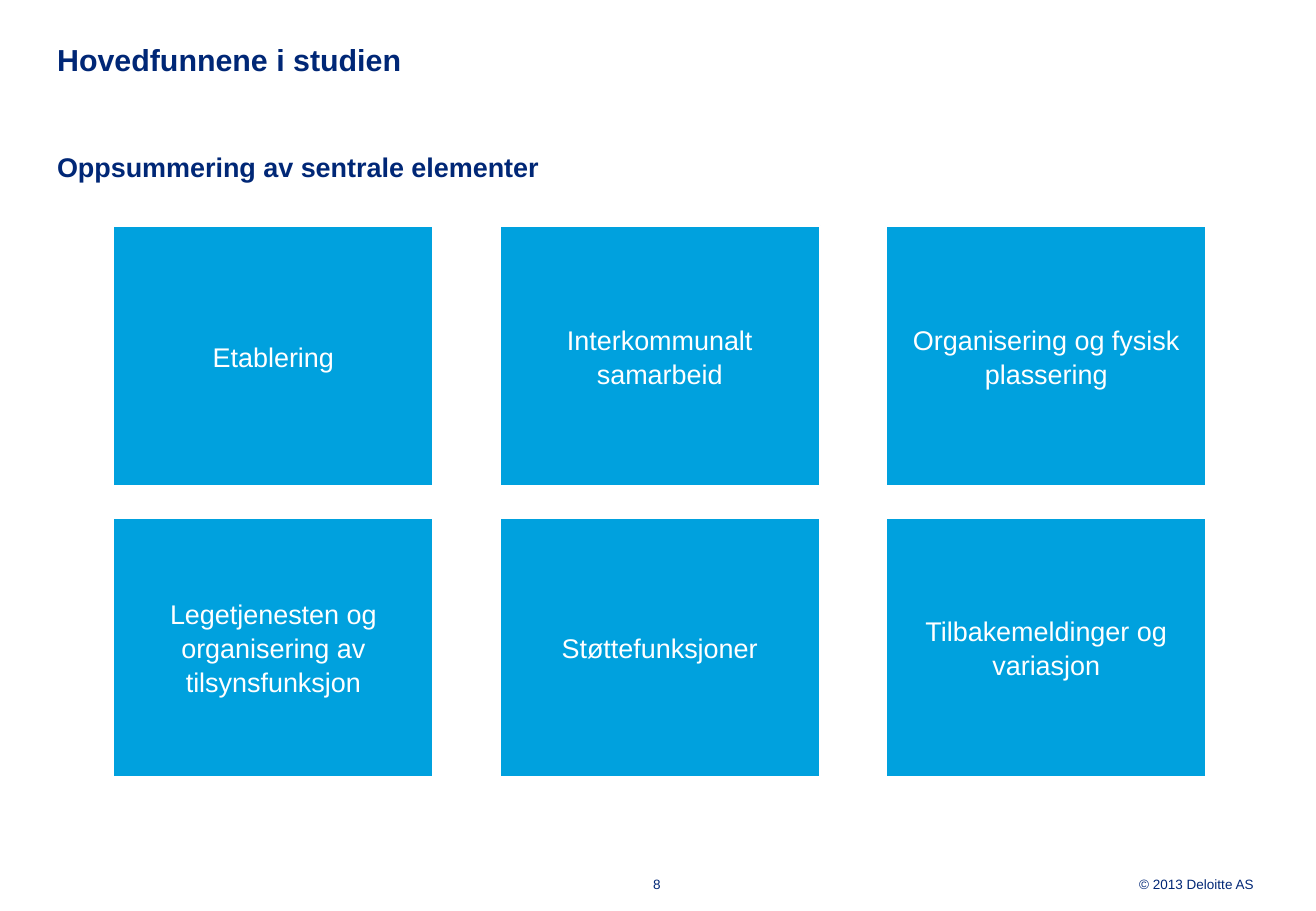
from dataclasses import dataclass

import pptx
import pptx.dml.color
import pptx.enum.shapes
import pptx.enum.text
import pptx.shapes.autoshape
import pptx.util

EMU_PER_PX = 9144  # 100 px to the inch
Align = pptx.enum.text.PP_ALIGN
Anchor = pptx.enum.text.MSO_ANCHOR


@dataclass(frozen=True)
class Theme:
    font: str = "Arial"
    navy: str = "002776"
    blue: str = "00A1DE"
    white: str = "FFFFFF"
    title_size: int = 18
    body_size: int = 16
    footer_size: int = 8
    outline: float = 1.5


@dataclass(frozen=True)
class Box:
    left: int
    top: int
    width: int
    height: int


@dataclass(frozen=True)
class TextStyle:
    size: int
    color: str
    align: Align
    anchor: Anchor
    spacing: float | pptx.util.Length
    bold: bool = False
    inset: int = 0
    wrap: bool = True


THEME = Theme()
TITLE = TextStyle(THEME.title_size, THEME.navy, Align.LEFT, Anchor.TOP, 1.06, bold=True)
SUBTITLE = TextStyle(THEME.body_size, THEME.navy, Align.LEFT, Anchor.BOTTOM, 1.06, bold=True)
TILE = TextStyle(THEME.body_size, THEME.white, Align.CENTER, Anchor.MIDDLE, 1.05, inset=4)
PAGE_NUMBER = TextStyle(THEME.footer_size, THEME.navy, Align.CENTER, Anchor.MIDDLE, pptx.util.Pt(11.2))
COPYRIGHT = TextStyle(THEME.footer_size, THEME.navy, Align.RIGHT, Anchor.MIDDLE, pptx.util.Pt(11.3), wrap=False)

FIRST_TILE = Box(93, 186, 264, 214)
COLUMN_STEP, ROW_STEP = 318, 240
COLUMNS = 3
FINDINGS = [
    "Etablering",
    "Interkommunalt samarbeid",
    "Organisering og fysisk plassering",
    "Legetjenesten og organisering av tilsynsfunksjon",
    "Støttefunksjoner",
    "Tilbakemeldinger og variasjon",
]


def px(length: int) -> pptx.util.Emu:
    return pptx.util.Emu(length * EMU_PER_PX)


def rgb(color: str) -> pptx.dml.color.RGBColor:
    return pptx.dml.color.RGBColor.from_string(color)


def edges(box: Box) -> tuple[pptx.util.Emu, ...]:
    return px(box.left), px(box.top), px(box.width), px(box.height)


def write(shape: pptx.shapes.autoshape.Shape, text: str, style: TextStyle) -> None:
    frame = shape.text_frame
    frame.text = text
    inset = px(style.inset)
    frame_format = {
        "auto_size": pptx.enum.text.MSO_AUTO_SIZE.NONE,
        "word_wrap": style.wrap,
        "vertical_anchor": style.anchor,
        "margin_left": inset,
        "margin_top": inset,
        "margin_right": inset,
        "margin_bottom": inset,
    }
    paragraph = frame.paragraphs[0]
    paragraph_format = {
        "alignment": style.align,
        "line_spacing": style.spacing,
        "space_before": pptx.util.Pt(0),
    }
    font = paragraph.runs[0].font
    font_format = {
        "name": THEME.font,
        "size": pptx.util.Pt(style.size),
        "bold": style.bold,
    }
    for target, values in (
        (frame, frame_format),
        (paragraph, paragraph_format),
        (font, font_format),
    ):
        for attribute, value in values.items():
            setattr(target, attribute, value)
    font.color.rgb = rgb(style.color)


def add_text(slide: pptx.slide.Slide, box: Box, text: str, style: TextStyle) -> None:
    write(slide.shapes.add_textbox(*edges(box)), text, style)


def add_tile(slide: pptx.slide.Slide, box: Box, text: str) -> None:
    tile = slide.shapes.add_shape(pptx.enum.shapes.MSO_SHAPE.RECTANGLE, *edges(box))
    tile.shadow.inherit = False
    tile.fill.solid()
    tile.fill.fore_color.rgb = rgb(THEME.blue)
    tile.line.color.rgb = rgb(THEME.white)
    tile.line.width = pptx.util.Pt(THEME.outline)
    write(tile, text, TILE)


def main() -> None:
    deck = pptx.Presentation()
    deck.slide_width, deck.slide_height = px(1083), px(750)
    slide = deck.slides.add_slide(deck.slide_layouts.get_by_name("Title Only"))

    title = slide.shapes.title
    title.left, title.top, title.width, title.height = edges(Box(47, 32, 989, 65))
    write(title, "Hovedfunnene i studien", TITLE)
    add_text(slide, Box(47, 124, 990, 27), "Oppsummering av sentrale elementer", SUBTITLE)

    for index, finding in enumerate(FINDINGS):
        row, column = divmod(index, COLUMNS)
        box = Box(
            FIRST_TILE.left + column * COLUMN_STEP,
            FIRST_TILE.top + row * ROW_STEP,
            FIRST_TILE.width,
            FIRST_TILE.height,
        )
        add_tile(slide, box, finding)

    add_text(slide, Box(520, 719, 41, 15), "8", PAGE_NUMBER)
    add_text(slide, Box(936, 719, 96, 15), "© 2013 Deloitte AS", COPYRIGHT)
    deck.save("out.pptx")


if __name__ == "__main__":
    main()
